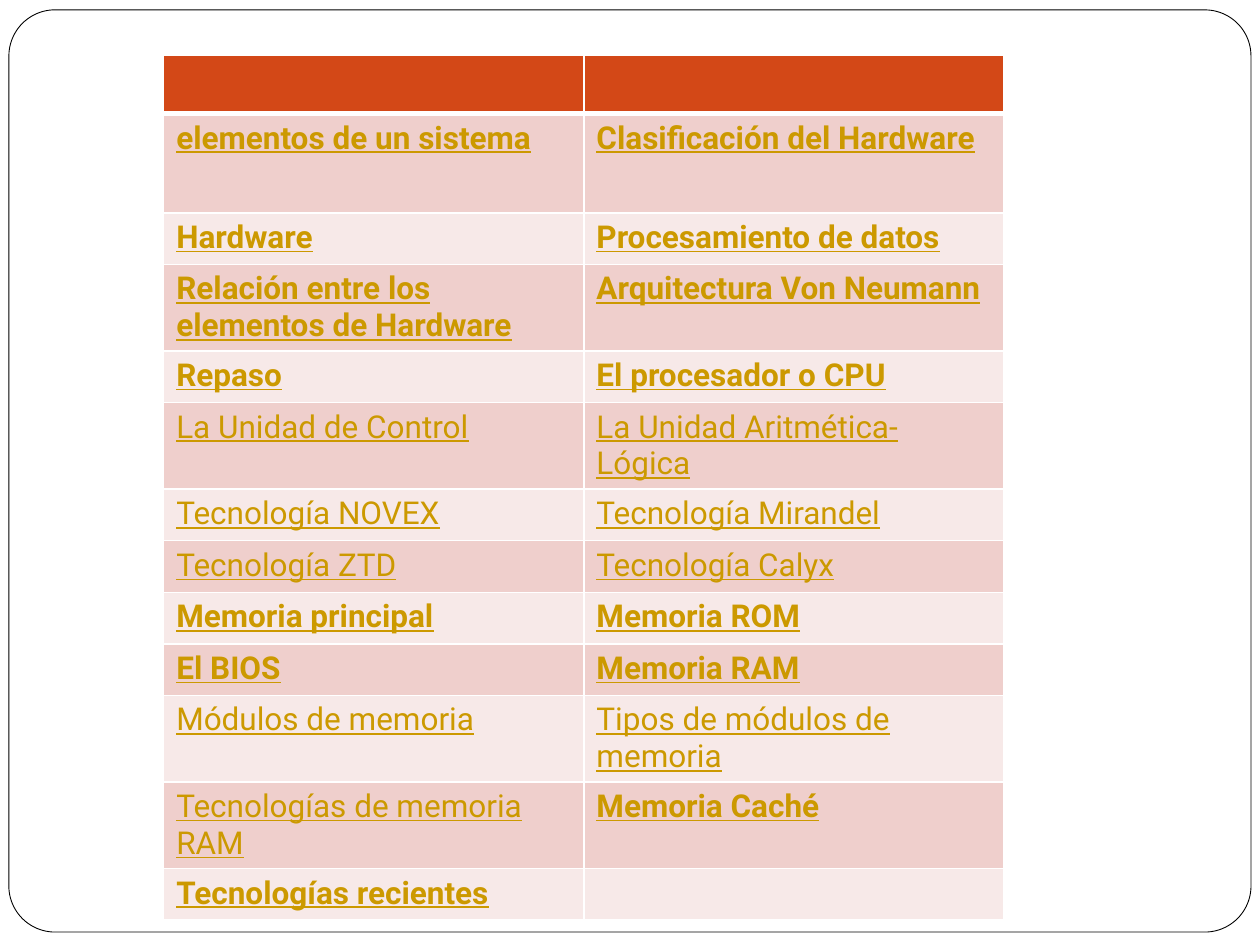
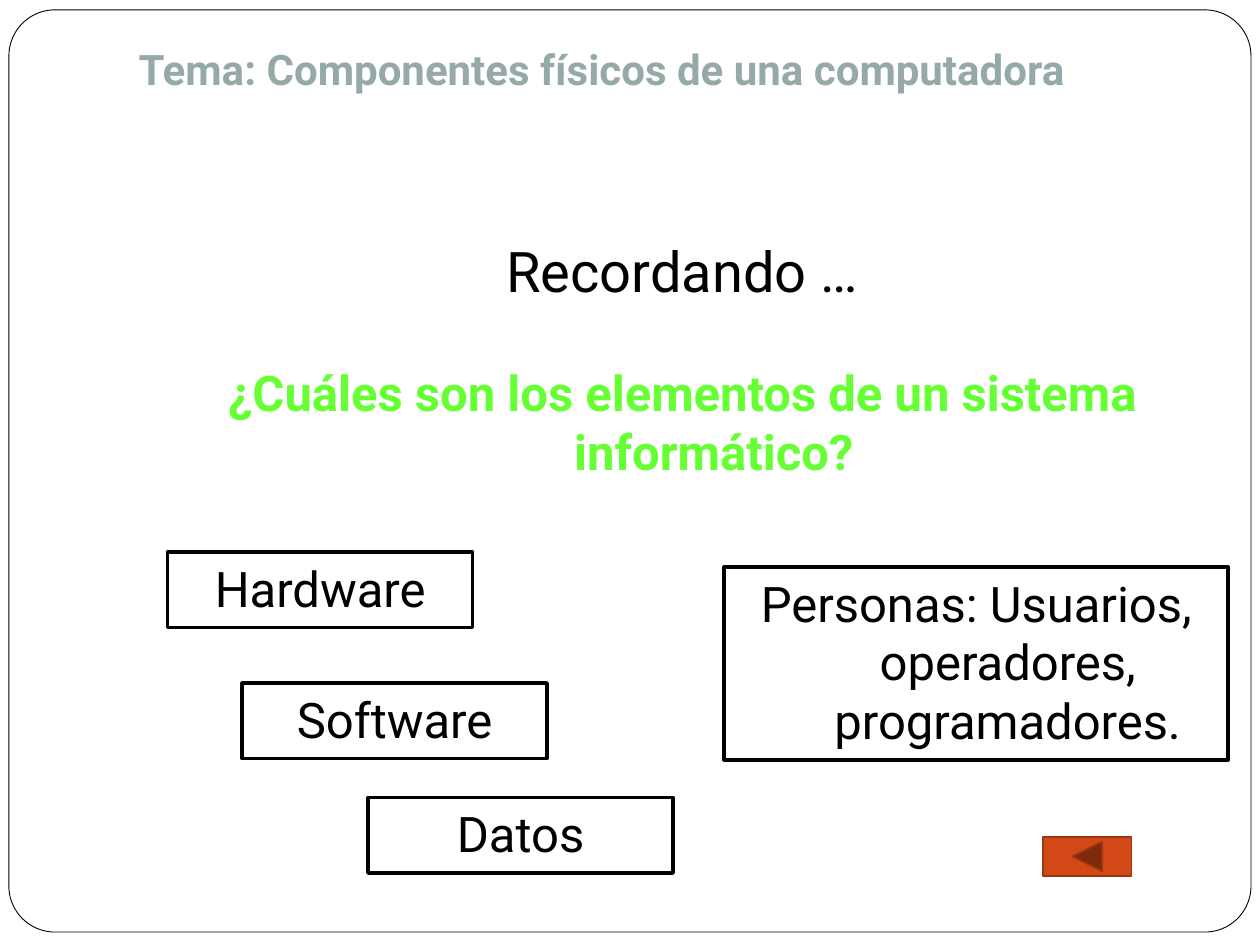
from lxml import etree
from pptx import Presentation
from pptx.dml.color import RGBColor
from pptx.enum import shapes, text
from pptx.oxml import ns
from pptx.util import Cm, Pt

FONT = "Roboto"
WHITE = RGBColor(0xFF, 0xFF, 0xFF)
BLACK = RGBColor(0, 0, 0)
RUST = RGBColor(0xD3, 0x48, 0x17)
BROWN = RGBColor(0x9C, 0x35, 0x11)
GOLD = RGBColor(0xCC, 0x99, 0x00)
GREY = RGBColor(0x96, 0xA9, 0xA9)
GREEN = RGBColor(0x66, 0xFF, 0x33)
BANDS = RGBColor(0xEF, 0xCF, 0xCC), RGBColor(0xF7, 0xE9, 0xE8)

# Content: index rows hold (text, bold) pairs
TOPICS = [
    (("elementos de un sistema", True), ("Clasificación del Hardware", True)),
    (("Hardware", True), ("Procesamiento de datos", True)),
    (("Relación entre los elementos de Hardware", True),
     ("Arquitectura Von Neumann", True)),
    (("Repaso", True), ("El procesador o CPU", True)),
    (("La Unidad de Control", False), ("La Unidad Aritmética-Lógica", False)),
    (("Tecnología NOVEX", False), ("Tecnología Mirandel", False)),
    (("Tecnología ZTD", False), ("Tecnología Calyx", False)),
    (("Memoria principal", True), ("Memoria ROM", True)),
    (("El BIOS", True), ("Memoria RAM", True)),
    (("Módulos de memoria", False), ("Tipos de módulos de memoria", False)),
    (("Tecnologías de memoria RAM", False), ("Memoria Caché", True)),
    (("Tecnologías recientes", True), ("", True)),
]
ROW = 1.04
TALL = {0: 1.17, 1: 2.0, 3: 1.73, 5: 1.73, 10: 1.73, 11: 1.73}
COL = 8.47

TITLE = "Tema: Componentes físicos de una computadora"
INTRO = "Recordando …"
ASK = "¿Cuáles son los elementos de un sistema informático?"
SMALL = 6.15, 1.52
PARTS = [
    ("Hardware", (3.38, 11.13, *SMALL)),
    ("Software", (4.88, 13.77, *SMALL)),
    ("Datos", (7.42, 16.08, *SMALL)),
    ("Personas: Usuarios, operadores, programadores.",
     (14.6, 11.43, 10.16, 3.89)),
]


def cms(box):
    return [Cm(n) for n in box]


def add_run(para, words, size, color, bold=False, under=None):
    run = para.add_run()
    run.text = words
    font = run.font
    font.name, font.size, font.bold = FONT, Pt(size), bold
    font.underline = under
    font.color.rgb = color


def write(shape, words, size, color, bold=False, hang=False,
          align=text.PP_ALIGN.CENTER):
    frame = shape.text_frame
    frame.word_wrap = True
    frame.auto_size = text.MSO_AUTO_SIZE.NONE
    frame.vertical_anchor = text.MSO_ANCHOR.TOP
    para = frame.paragraphs[0]
    para.alignment = align
    if hang:
        props = para._p.get_or_add_pPr()
        props.set("marL", str(Cm(1.27)))
        props.set("indent", str(-Cm(1.27)))
    add_run(para, words, size, color, bold)


def add_box(slide, kind, box, fill, line, width):
    shape = slide.shapes.add_shape(kind, *cms(box))
    shape.shadow.inherit = False
    if fill is None:
        shape.fill.background()
    else:
        shape.fill.solid()
        shape.fill.fore_color.rgb = fill
    shape.line.color.rgb = line
    shape.line.width = Pt(width)
    return shape


def add_edges(cell, top, bottom):
    props = cell._tc.get_or_add_tcPr()
    for i, (side, width) in enumerate(
            (("L", 1), ("R", 1), ("T", top), ("B", bottom))):
        edge = etree.Element(ns.qn("a:ln" + side), w=str(Pt(width)))
        fill = etree.SubElement(edge, ns.qn("a:solidFill"))
        etree.SubElement(fill, ns.qn("a:srgbClr"), val=str(WHITE))
        props.insert(i, edge)


def add_frame(deck, slide):
    """Rounded page frame, moved to the master so every slide shows it."""
    frame = add_box(slide, shapes.MSO_SHAPE.ROUNDED_RECTANGLE,
                    (0.18, 0.2, 25.04, 18.59), WHITE, BLACK, 0.5)
    frame.adjustments[0] = 0.05
    deck.slide_master.shapes._spTree.insert(2, frame._element)


def fill_index(slide):
    count = len(TOPICS) + 1
    high = [TALL.get(i, ROW) for i in range(count)]
    table = slide.shapes.add_table(
        count, 2, *cms((3.3, 1.12, 2 * COL, sum(high)))).table
    for col in table.columns:
        col.width = Cm(COL)
    blank = (("", False), ("", False))
    for i, pair in enumerate([blank] + TOPICS):
        table.rows[i].height = Cm(high[i])
        for j, (words, bold) in enumerate(pair):
            cell = table.cell(i, j)
            cell.fill.solid()
            cell.fill.fore_color.rgb = BANDS[(i - 1) % 2] if i else RUST
            add_edges(cell, 3 if i == 1 else 1, 1 if i else 3)
            if words:
                add_run(cell.text_frame.paragraphs[0], words, 18, GOLD,
                        bold, True)


def fill_recap(slide):
    # Title
    title = slide.shapes.title
    title.left, title.top, title.width, title.height = cms(
        (2.54, 0.74, 21.18, 1.27))
    write(title, TITLE, 24, GREY, True, align=text.PP_ALIGN.LEFT)

    # Question
    ask = slide.shapes.add_textbox(*cms((2.54, 7.19, 22.43, 2.62)))
    write(ask, ASK, 28, GREEN, True, hang=True)
    intro = slide.shapes.add_textbox(*cms((2.54, 4.65, 22.43, 1.6)))
    write(intro, INTRO, 32, BLACK)

    # Answers
    for words, box in PARTS:
        part = add_box(slide, shapes.MSO_SHAPE.RECTANGLE, box, None, BLACK, 2)
        write(part, words, 28, BLACK, hang=True)

    # Back button
    add_box(slide, shapes.MSO_SHAPE.ACTION_BUTTON_BACK_OR_PREVIOUS,
            (21.03, 16.87, 1.78, 0.79), RUST, BROWN, 1)


def main():
    deck = Presentation()
    deck.slide_width, deck.slide_height = Cm(25.4), Cm(19.05)
    index = deck.slides.add_slide(deck.slide_layouts[6])
    add_frame(deck, index)
    fill_index(index)
    fill_recap(deck.slides.add_slide(deck.slide_layouts[5]))
    deck.save("out.pptx")


if __name__ == "__main__":
    main()
